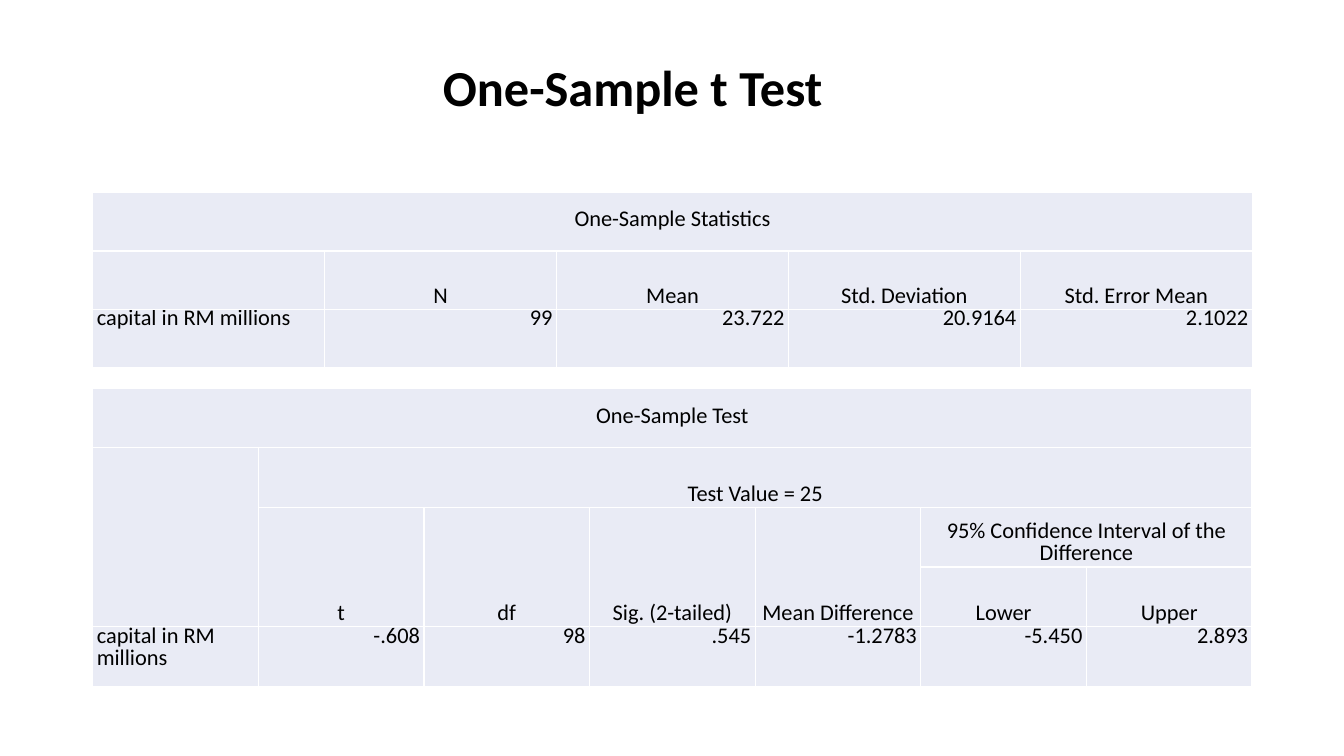
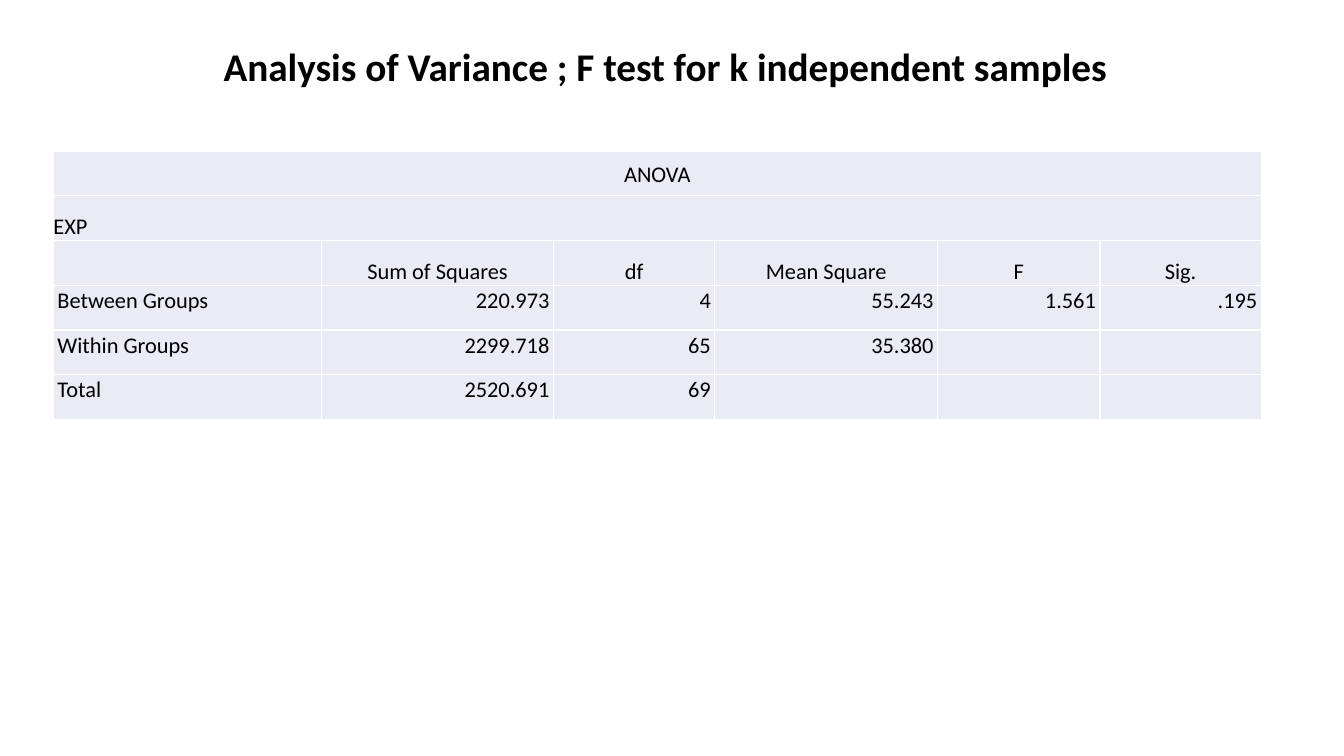
"""Build two slides of statistical test tables."""
from pptx import Presentation
from pptx.dml.color import RGBColor
from pptx.enum.text import MSO_ANCHOR, MSO_AUTO_SIZE, PP_ALIGN
from pptx.util import Inches, Pt

FONT, INK, CELL = "Calibri", "000000", "E9EBF5"
INDENT = Inches(0.04)


def rgb(color):
    return RGBColor.from_string(color)


def style(p, text, size, align, spacing=None, indent=0, bold=False):
    p.text = text
    p.alignment = align
    p.line_spacing = spacing
    p.font.name, p.font.size, p.font.bold = FONT, Pt(size), bold
    p.font.color.rgb = rgb(INK)
    for side in ("marL", "marR"):
        p._p.get_or_add_pPr().set(side, str(indent))


statistics = {
    "box": (0.92, 1.91, 11.5, 1.74), "weights": [1] * 5,
    "head": 2, "spacing": Pt(16), "merges": [(0, 0, 0, 4)],
    "rows": [
        ["One-Sample Statistics", "", "", "", ""],
        ["", "N", "Mean", "Std. Deviation", "Std. Error Mean"],
        ["capital in RM millions", "99", "23.722", "20.9164", "2.1022"],
    ],
}
t_test = {
    "box": (0.92, 3.85, 11.5, 2.96), "weights": [1] * 7,
    "head": 4, "spacing": Pt(16),
    "merges": [(0, 0, 0, 6), (1, 0, 3, 0), (1, 1, 1, 6), (2, 5, 2, 6)]
    + [(2, c, 3, c) for c in range(1, 5)],
    "rows": [
        ["One-Sample Test", "", "", "", "", "", ""],
        ["", "Test Value = 25", "", "", "", "", ""],
        ["", "t", "df", "Sig. (2-tailed)", "Mean Difference",
         "95% Confidence Interval of the Difference", ""],
        ["", "", "", "", "", "Lower", "Upper"],
        ["capital in RM millions", "-.608", "98", ".545", "-1.2783", "-5.450", "2.893"],
    ],
}
anova = {
    "box": (0.53, 1.5, 11.98, 2.66), "weights": [2.66, 2.3, 1.6, 2.21, 1.61, 1.6],
    "head": 3, "spacing": 1.07, "merges": [(0, 0, 0, 5), (1, 0, 1, 5)],
    "rows": [
        ["ANOVA", "", "", "", "", ""],
        ["EXP", "", "", "", "", ""],
        ["", "Sum of Squares", "df", "Mean Square", "F", "Sig."],
        ["Between Groups", "220.973", "4", "55.243", "1.561", ".195"],
        ["Within Groups", "2299.718", "65", "35.380", "", ""],
        ["Total", "2520.691", "69", "", "", ""],
    ],
}
slides = [
    ("One-Sample t Test", (2.85, 0.89, 6.85, 0.4),
     (36, PP_ALIGN.CENTER, Pt(16), INDENT), [t_test, statistics]),
    ("Analysis of Variance ; F test for k independent samples", (2.12, 0.37, 9.09, 0.57),
     (28, PP_ALIGN.LEFT), [anova]),
]

prs = Presentation()
prs.slide_width, prs.slide_height = Inches(13.33), Inches(7.5)

for title, title_box, title_style, tables in slides:
    s = prs.slides.add_slide(prs.slide_layouts[6])
    for spec in tables:
        rows, weights, head = spec["rows"], spec["weights"], spec["head"]
        left, top, width, height = map(Inches, spec["box"])
        table = s.shapes.add_table(len(rows), len(weights), left, top, width, height).table
        table.first_row = table.horz_banding = False
        for col, weight in zip(table.columns, weights):
            col.width = int(width * weight / sum(weights))
        for row in table.rows:
            row.height = height // len(rows)
        for r1, c1, r2, c2 in spec["merges"]:
            table.cell(r1, c1).merge(table.cell(r2, c2))

        for r, row in enumerate(rows):
            for c, text in enumerate(row):
                cell = table.cell(r, c)
                cell.fill.solid()
                cell.fill.fore_color.rgb = rgb(CELL)
                if not text:
                    continue
                cell.margin_left = cell.margin_right = 0
                cell.margin_top = cell.margin_bottom = 0
                if r == 0:
                    cell.vertical_anchor = MSO_ANCHOR.MIDDLE
                elif r < head:
                    cell.vertical_anchor = MSO_ANCHOR.BOTTOM
                if c == 0 and r > 0:
                    align = PP_ALIGN.LEFT
                else:
                    align = PP_ALIGN.CENTER if r < head else PP_ALIGN.RIGHT
                flush = c == 0 and 0 < r < head
                style(cell.text_frame.paragraphs[0], text, 16, align,
                      spec["spacing"], 0 if flush else INDENT)

    tf = s.shapes.add_textbox(*map(Inches, title_box)).text_frame
    tf.word_wrap = True
    tf.auto_size = MSO_AUTO_SIZE.SHAPE_TO_FIT_TEXT
    style(tf.paragraphs[0], title, *title_style, bold=True)

prs.save("out.pptx")
